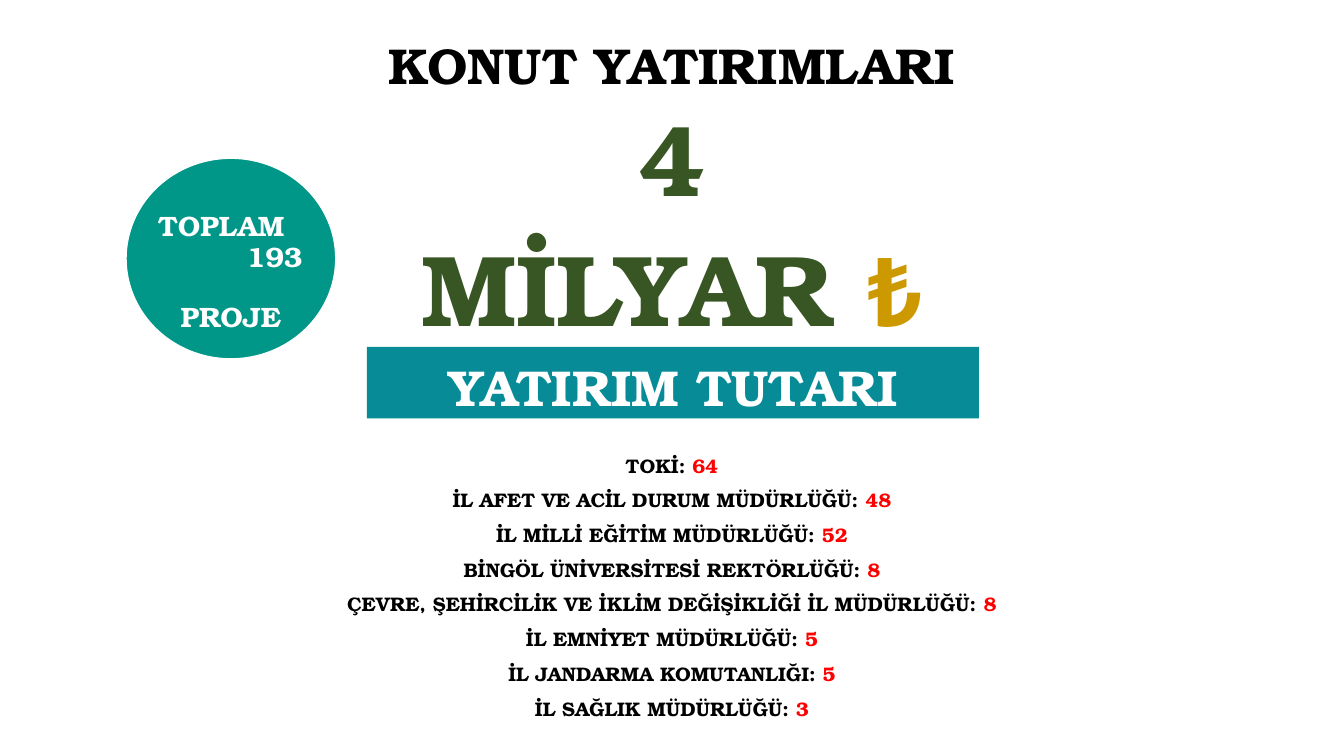
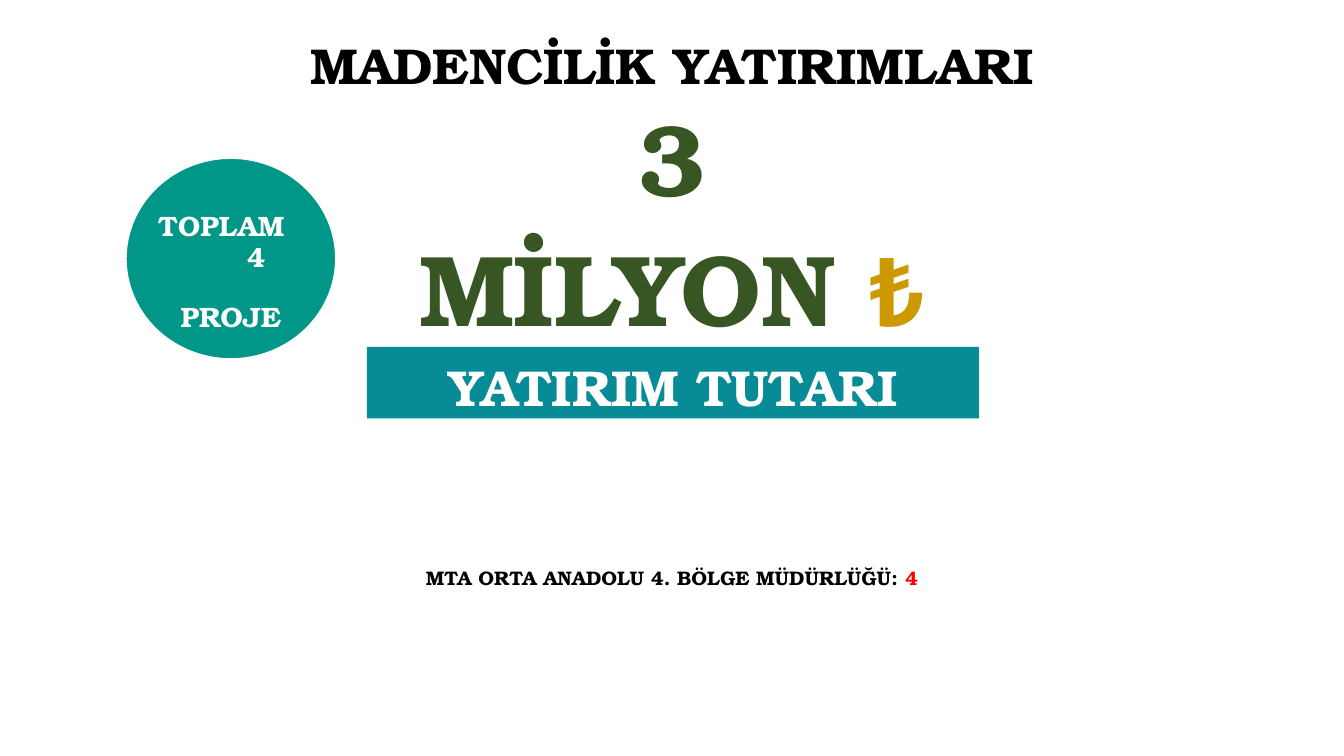
import pptx
import pptx.util
import pptx.dml.color
import pptx.enum.shapes
import pptx.enum.text

Inches = pptx.util.Inches
Pt = pptx.util.Pt
SHAPE = pptx.enum.shapes.MSO_SHAPE
ALIGN = pptx.enum.text.PP_ALIGN

FONT = "TeX Gyre Bonum"
COLORS = {
    "black": "000000",
    "white": "FFFFFF",
    "red": "FF0000",
    "circle": "009688",
    "band": "068B97",
    "amount": "385623",
    "lira": "CC9900",
}

SLIDES = [
    {
        "title": "KONUT YATIRIMLARI",
        "amount": "4",
        "unit": "MİLYAR ",
        "projects": "193",
        "list_box": (4.45, 2.77),
        "agencies": [
            ("TOKİ: ", "64"),
            ("İL AFET VE ACİL DURUM MÜDÜRLÜĞÜ: ", "48"),
            ("İL MİLLİ EĞİTİM MÜDÜRLÜĞÜ: ", "52"),
            ("BİNGÖL ÜNİVERSİTESİ REKTÖRLÜĞÜ: ", "8"),
            ("ÇEVRE, ŞEHİRCİLİK VE İKLİM DEĞİŞİKLİĞİ İL MÜDÜRLÜĞÜ: ", "8"),
            ("İL EMNİYET MÜDÜRLÜĞÜ: ", "5"),
            ("İL JANDARMA KOMUTANLIĞI: ", "5"),
            ("İL SAĞLIK MÜDÜRLÜĞÜ: ", "3"),
        ],
    },
    {
        "title": "MADENCİLİK YATIRIMLARI",
        "amount": "3",
        "unit": "MİLYON ",
        "projects": "4",
        "list_box": (5.57, 0.34),
        "agencies": [("MTA ORTA ANADOLU 4. BÖLGE MÜDÜRLÜĞÜ: ", "4")],
    },
]


def rgb(name):
    return pptx.dml.color.RGBColor.from_string(COLORS[name])


def write(sp, text, size, color="black", font=FONT, align=ALIGN.CENTER,
          spacing=1.0, before=0, after=0, indent=0, same_line=False):
    tf = sp.text_frame
    tf.word_wrap = True
    tf.vertical_anchor = pptx.enum.text.MSO_ANCHOR.TOP
    p = tf.paragraphs[-1]
    if not same_line:
        if p.runs:
            p = tf.add_paragraph()
        p.alignment = align
        p.line_spacing = spacing
        p.space_before = Pt(before)
        p.space_after = Pt(after)
        if indent:
            p._p.get_or_add_pPr().set("marL", str(Inches(indent)))
    r = p.add_run()
    r.text = text
    r.font.name = font
    r.font.size = Pt(size)
    r.font.bold = True
    r.font.color.rgb = rgb(color)


prs = pptx.Presentation()
prs.slide_width = Inches(13.33)
prs.slide_height = Inches(7.5)

for data in SLIDES:
    s = prs.slides.add_slide(prs.slide_layouts[6])

    title = s.shapes.add_textbox(Inches(1.15), Inches(0.25), Inches(11.03), Inches(0.75))
    write(title, data["title"], 36, spacing=1.07, after=8)

    circle = s.shapes.add_shape(SHAPE.OVAL, Inches(1.25), Inches(1.57), Inches(2.08), Inches(1.99))
    circle.shadow.inherit = False
    circle.fill.solid()
    circle.fill.fore_color.rgb = rgb("circle")
    circle.line.color.rgb = rgb("white")
    circle.line.width = Pt(1)

    total = s.shapes.add_textbox(Inches(1.47), Inches(2.06), Inches(1.64), Inches(1.01))
    write(total, "TOPLAM", 20, color="white", align=ALIGN.LEFT, spacing=0.9)
    write(total, data["projects"], 20, color="white", align=ALIGN.LEFT, spacing=0.9, indent=0.88)
    write(total, "PROJE", 20, color="white", spacing=0.9, before=21.4)

    band = s.shapes.add_shape(SHAPE.RECTANGLE, Inches(3.64), Inches(3.44), Inches(6.07), Inches(0.71))
    band.shadow.inherit = False
    band.fill.solid()
    band.fill.fore_color.rgb = rgb("band")
    band.line.fill.background()
    write(band, "YATIRIM TUTARI", 36, color="white", spacing=1.07)

    top, height = data["list_box"]
    agencies = s.shapes.add_textbox(Inches(3.33), Inches(top), Inches(6.67), Inches(height))
    for name, count in data["agencies"]:
        write(agencies, name, 14, after=8)
        write(agencies, count, 14, color="red", same_line=True)

    amount = s.shapes.add_textbox(Inches(3.98), Inches(0.82), Inches(5.37), Inches(2.52))
    write(amount, data["amount"], 72, color="amount", spacing=1.07)
    write(amount, data["unit"], 72, color="amount", spacing=1.07)
    write(amount, "₺", 68, color="lira", font="Arial", same_line=True)

prs.save("out.pptx")
